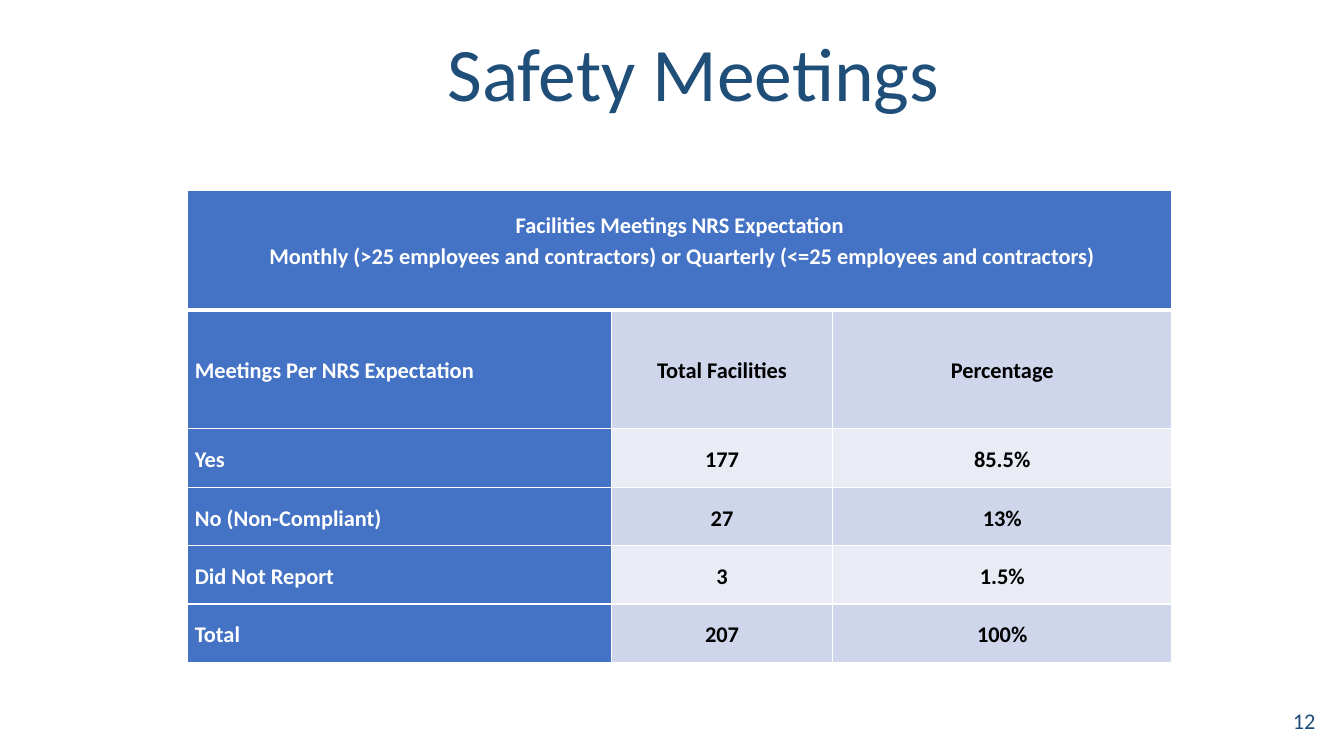
from lxml import etree
from pptx import Presentation
from pptx.dml.color import RGBColor
from pptx.enum.text import MSO_ANCHOR, PP_ALIGN
from pptx.oxml.ns import qn
from pptx.util import Pt

LEFT, CENTER, RIGHT = PP_ALIGN.LEFT, PP_ALIGN.CENTER, PP_ALIGN.RIGHT
MIDDLE, BOTTOM = MSO_ANCHOR.MIDDLE, MSO_ANCHOR.BOTTOM

FONT = "Calibri"
NAVY, BLUE, WHITE, BLACK = "1F4E79", "4472C4", "FFFFFF", "000000"
BANDS = ("CFD5EA", "E9EBF5")

EXPECTATION = (
    "Facilities Meetings NRS Expectation\n"
    " Monthly (>25 employees and contractors) or Quarterly (<=25 employees and contractors)"
)
MEETINGS = [
    ("Meetings Per NRS Expectation", "Total Facilities", "Percentage"),
    ("Yes", "177", "85.5%"),
    ("No (Non-Compliant)", "27", "13%"),
    ("Did Not Report", "3", "1.5%"),
    ("Total", "207", "100%"),
]
COLUMN_SHARES = (4.2, 2.2, 3.36)
ROW_SHARES = (1.18, 1.18, 0.58, 0.58, 0.58, 0.58)


def rgb(color):
    return RGBColor.from_string(color)


def write(frame, text, size, color, align, bold=False, spacing=1.0):
    frame.text = text
    for paragraph in frame.paragraphs:
        paragraph.alignment = align
        paragraph.line_spacing = spacing
        for run in paragraph.runs:
            run.font.name = FONT
            run.font.size = Pt(size)
            run.font.bold = bold
            run.font.color.rgb = rgb(color)


def add_label(slide, box, text, size, align, anchor, spacing=1.0):
    frame = slide.shapes.add_textbox(*map(Pt, box)).text_frame
    frame.word_wrap = True
    frame.vertical_anchor = anchor
    write(frame, text, size, NAVY, align, spacing=spacing)


def add_borders(cell, top, bottom):
    properties = cell._tc.get_or_add_tcPr()
    for side, width in (("L", 1), ("R", 1), ("T", top), ("B", bottom)):
        line = etree.SubElement(properties, qn(f"a:ln{side}"), w=str(Pt(width)))
        fill = etree.SubElement(line, qn("a:solidFill"))
        etree.SubElement(fill, qn("a:srgbClr"), val=WHITE)


def fill_cell(cell, text, fill, color, align, top=1, bottom=1):
    add_borders(cell, top, bottom)
    cell.fill.solid()
    cell.fill.fore_color.rgb = rgb(fill)
    cell.vertical_anchor = MIDDLE
    cell.margin_left = cell.margin_right = Pt(5)
    cell.margin_top = cell.margin_bottom = 0
    write(cell.text_frame, text, 16, color, align, bold=True, spacing=1.15)


def add_meetings_table(slide, box):
    left, top, width, height = box
    table = slide.shapes.add_table(
        len(ROW_SHARES), len(COLUMN_SHARES), *map(Pt, box)
    ).table
    for column, share in zip(table.columns, COLUMN_SHARES):
        column.width = Pt(width * share / sum(COLUMN_SHARES))
    for row, share in zip(table.rows, ROW_SHARES):
        row.height = Pt(height * share / sum(ROW_SHARES))

    heading = table.cell(0, 0)
    heading.merge(table.cell(0, len(COLUMN_SHARES) - 1))
    fill_cell(heading, EXPECTATION, BLUE, WHITE, CENTER, bottom=3)
    heading.margin_bottom = Pt(16)

    for r, (answer, *figures) in enumerate(MEETINGS, start=1):
        rule = 3 if r == 1 else 1
        fill_cell(table.cell(r, 0), answer, BLUE, WHITE, LEFT, top=rule)
        for c, figure in enumerate(figures, start=1):
            band = BANDS[(r - 1) % 2]
            fill_cell(table.cell(r, c), figure, band, BLACK, CENTER, top=rule)


def main():
    deck = Presentation()
    deck.slide_width, deck.slide_height = Pt(960), Pt(540)
    slide = deck.slides.add_slide(deck.slide_layouts[6])
    add_label(slide, (109.4, 21.6, 784, 66.2), "Safety Meetings ", 54, CENTER, BOTTOM, 0.9)
    add_meetings_table(slide, (134.2, 136.3, 702.7, 337))
    add_label(slide, (730.8, 500.4, 216, 28.8), "12", 16, RIGHT, MIDDLE)
    deck.save("out.pptx")


if __name__ == "__main__":
    main()
